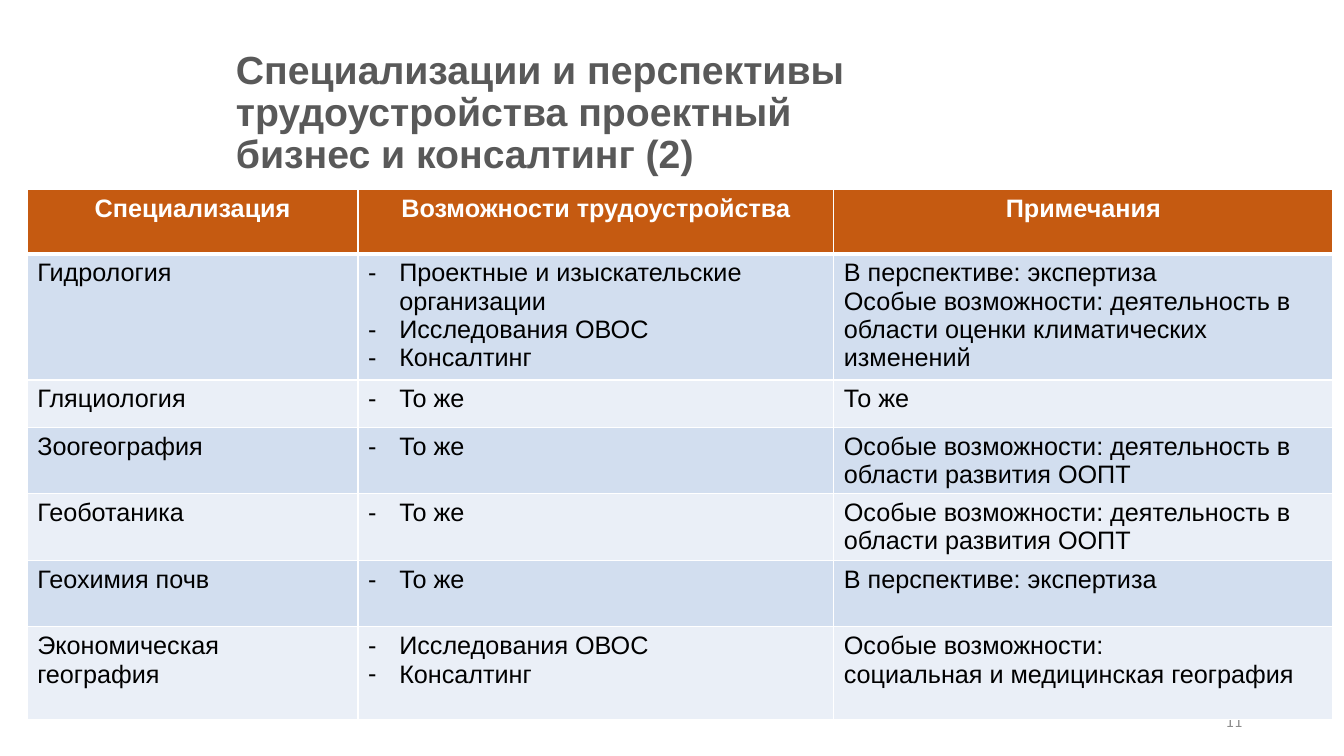
from dataclasses import dataclass

from lxml import etree
from pptx import Presentation
from pptx import util as u
from pptx.dml.color import RGBColor
from pptx.enum import text
from pptx.oxml import ns

PX = 9144  # EMU per px, 100 px to the inch

WHITE = RGBColor(0xFF, 0xFF, 0xFF)
BLACK = RGBColor(0x00, 0x00, 0x00)
TITLE_GREY = RGBColor(0x59, 0x59, 0x59)
NUMBER_GREY = RGBColor(0x8C, 0x8C, 0x8C)
HEADER_ORANGE = RGBColor(0xC5, 0x5A, 0x11)
BAND_DARK = RGBColor(0xD2, 0xDE, 0xEF)
BAND_LIGHT = RGBColor(0xEA, 0xEF, 0xF7)

HEADINGS = ("Специализация", "Возможности трудоустройства", "Примечания")
COLUMN_WIDTHS = (328, 472, 495)
HEADER_HEIGHT = 64
BULLET_INDENT = 31
SAME = "То же"
EXPERTISE = "В перспективе: экспертиза"
RESERVES = "Особые возможности: деятельность в области развития ООПТ"
EIA = "Исследования ОВОС"
CONSULTING = "Консалтинг"


@dataclass(frozen=True)
class Specialization:
    name: str
    jobs: tuple[str, ...]
    notes: tuple[str, ...]
    height: int


SPECIALIZATIONS = (
    Specialization(
        "Гидрология",
        ("Проектные и изыскательские организации", EIA, CONSULTING),
        (EXPERTISE, "Особые возможности: деятельность в области оценки климатических изменений"),
        122,
    ),
    Specialization("Гляциология", (SAME,), (SAME,), 47),
    Specialization("Зоогеография", (SAME,), (RESERVES,), 66),
    Specialization("Геоботаника", (SAME,), (RESERVES,), 66),
    Specialization("Геохимия почв", (SAME,), (EXPERTISE,), 66),
    Specialization(
        "Экономическая география",
        (EIA, CONSULTING),
        ("Особые возможности:", "социальная и медицинская география"),
        92,
    ),
)


def px(length: int) -> u.Emu:
    return u.Emu(length * PX)


def add_run(paragraph, words: str, size: int, color: RGBColor,
            bold: bool = False, font: str = "Arial") -> None:
    run = paragraph.add_run()
    run.text = words
    run.font.name = font
    run.font.size = u.Pt(size)
    run.font.bold = bold
    run.font.color.rgb = color


def add_dash(paragraph) -> None:
    properties = paragraph._p.get_or_add_pPr()
    properties.set("marL", str(px(BULLET_INDENT)))
    properties.set("indent", str(-px(BULLET_INDENT)))
    etree.SubElement(properties, ns.qn("a:buFont")).set("typeface", "Arial")
    etree.SubElement(properties, ns.qn("a:buChar")).set("char", "-")


def add_borders(cell, top: int = 1, bottom: int = 1) -> None:
    properties = cell._tc.get_or_add_tcPr()
    widths = {"a:lnL": 1, "a:lnR": 1, "a:lnT": top, "a:lnB": bottom}
    for position, (side, width) in enumerate(widths.items()):
        line = etree.Element(ns.qn(side), w=str(u.Pt(width)))
        fill = etree.SubElement(line, ns.qn("a:solidFill"))
        etree.SubElement(fill, ns.qn("a:srgbClr")).set("val", str(WHITE))
        properties.insert(position, line)


def fill_cell(cell, lines: tuple[str, ...], fill: RGBColor,
              header: bool = False, dashed: bool = False) -> None:
    cell.fill.solid()
    cell.fill.fore_color.rgb = fill
    cell.margin_bottom = px(0)  # keeps full rows at their set height
    frame = cell.text_frame
    for number, words in enumerate(lines):
        paragraph = frame.add_paragraph() if number else frame.paragraphs[0]
        if header:
            paragraph.alignment = text.PP_ALIGN.CENTER
        if dashed:
            add_dash(paragraph)
        add_run(paragraph, words, 18, WHITE if header else BLACK, bold=header)


def add_title(slide) -> None:
    title = slide.shapes.title
    title.left, title.top, title.width, title.height = map(px, (224, 74, 641, 78))
    frame = title.text_frame
    frame.word_wrap = True
    frame.auto_size = text.MSO_AUTO_SIZE.NONE
    frame.vertical_anchor = text.MSO_ANCHOR.MIDDLE
    heading = frame.paragraphs[0]
    heading.alignment = text.PP_ALIGN.LEFT
    heading.line_spacing = 0.9
    add_run(heading, "Специализации и перспективы трудоустройства проектный "
            "бизнес и консалтинг (2)", 28, TITLE_GREY, bold=True)


def add_page_number(slide) -> None:
    frame = slide.shapes.add_textbox(*map(px, (942, 695, 300, 40))).text_frame
    frame.word_wrap = True
    frame.vertical_anchor = text.MSO_ANCHOR.MIDDLE
    number = frame.paragraphs[0]
    number.alignment = text.PP_ALIGN.RIGHT
    add_run(number, "11", 12, NUMBER_GREY, font="Calibri")


def add_specializations(slide) -> None:
    heights = [HEADER_HEIGHT, *(item.height for item in SPECIALIZATIONS)]
    table = slide.shapes.add_table(
        len(heights), len(HEADINGS),
        *map(px, (27, 188, sum(COLUMN_WIDTHS), sum(heights))),
    ).table
    for column, width in zip(table.columns, COLUMN_WIDTHS):
        column.width = px(width)
    for row, height in zip(table.rows, heights):
        row.height = px(height)

    # Header row
    for column, heading in enumerate(HEADINGS):
        cell = table.cell(0, column)
        fill_cell(cell, (heading,), HEADER_ORANGE, header=True)
        add_borders(cell, bottom=3)

    # Banded rows
    for row, item in enumerate(SPECIALIZATIONS, start=1):
        band = BAND_DARK if row % 2 else BAND_LIGHT
        for column, lines in enumerate(((item.name,), item.jobs, item.notes)):
            cell = table.cell(row, column)
            fill_cell(cell, lines, band, dashed=column == 1)
            add_borders(cell, top=3 if row == 1 else 1)


def main() -> None:
    deck = Presentation()
    deck.slide_width, deck.slide_height = px(1333), px(750)
    slide = deck.slides.add_slide(deck.slide_layouts.get_by_name("Title Only"))
    add_title(slide)
    # The table goes in last, above the page number
    add_page_number(slide)
    add_specializations(slide)
    deck.save("out.pptx")


if __name__ == "__main__":
    main()
